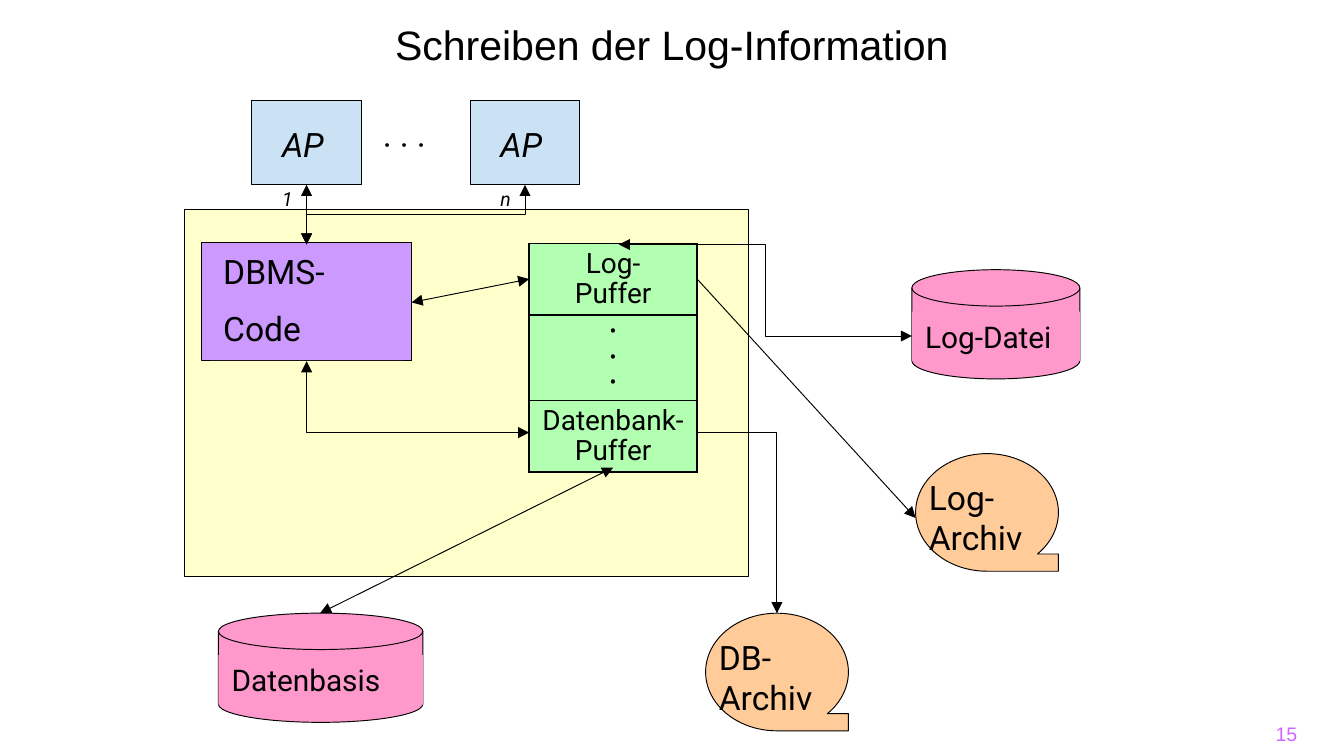
from dataclasses import dataclass

from lxml.etree import SubElement
from pptx import Presentation
from pptx.dml.color import RGBColor
from pptx.enum.shapes import MSO_CONNECTOR, MSO_SHAPE
from pptx.enum.text import MSO_ANCHOR, PP_ALIGN
from pptx.oxml.ns import qn
from pptx.util import Pt


@dataclass(frozen=True)
class Theme:
    ink: str = "000000"
    frame: str = "FFFF99"
    code: str = "CC99FF"
    app: str = "98C6EA"
    table: str = "66FF99"
    disk: str = "FF99CC"
    tape: str = "FFCC99"
    page: str = "CC66FF"
    head: str = "Arial"
    body: str = "Roboto"
    title: float = 22
    large: float = 18
    label: float = 16
    cell: float = 15
    dot: float = 11
    small: float = 10.5
    thin: float = 0.5


class Board:
    def __init__(self, theme, slide):
        self.theme = theme
        self.slide = slide

    def style(self, par, size, face=None, color=None):
        font = par.font
        font.size = Pt(size)
        font.name = face or self.theme.body
        font.color.rgb = RGBColor.from_string(color or self.theme.ink)

    def paint(self, fill, node, color, clear=False):
        fill.solid()
        fill.fore_color.rgb = RGBColor.from_string(color)
        if clear:
            tone = node.find(qn("a:solidFill")).find(qn("a:srgbClr"))
            SubElement(tone, qn("a:alpha")).set("val", "50000")

    def title(self, text, x, y, w, h):
        box = self.slide.shapes.title
        box.left, box.top, box.width, box.height = map(Pt, (x, y, w, h))
        frame = box.text_frame
        frame.text = text
        frame.vertical_anchor = MSO_ANCHOR.BOTTOM
        par = frame.paragraphs[0]
        par.alignment = PP_ALIGN.CENTER
        par.line_spacing = 1.25
        self.style(par, self.theme.title, self.theme.head)

    def shape(self, kind, x, y, w, h, color, clear=False, line=True):
        item = self.slide.shapes.add_shape(kind, Pt(x), Pt(y), Pt(w), Pt(h))
        item.shadow.inherit = False
        self.paint(item.fill, item._element.spPr, color, clear)
        if line:
            item.line.color.rgb = RGBColor.from_string(self.theme.ink)
            item.line.width = Pt(self.theme.thin)
        else:
            item.line.fill.background()
        return item

    def text(self, text, x, y, w, h, size, face=None, color=None):
        box = self.slide.shapes.add_textbox(Pt(x), Pt(y), Pt(w), Pt(h))
        self.label(box, text, size, face, color)
        return box

    def label(self, item, text, size, face=None, color=None):
        frame = item.text_frame
        frame.word_wrap = True
        frame.vertical_anchor = MSO_ANCHOR.TOP
        frame.text = text
        for row, par in enumerate(frame.paragraphs):
            par.alignment = PP_ALIGN.LEFT
            if row:
                par.space_before = Pt(size / 2)
            self.style(par, size, face, color)

    def app(self, x, sub):
        theme = self.theme
        self.shape(MSO_SHAPE.RECTANGLE, x, 54, 58.5, 45, theme.app, True)
        box = self.text("AP", x + 9, 63, 40.5, 51, theme.large)
        par = box.text_frame.paragraphs[0]
        par.font.italic = True
        run = par.add_run()
        run.text = sub
        run.font._element.set("baseline", "-25000")

    def disk(self, text, x, y, w):
        theme = self.theme
        self.shape(MSO_SHAPE.FLOWCHART_MAGNETIC_DISK, x, y, w, 58.5, theme.disk)
        band = self.shape(MSO_SHAPE.RECTANGLE, x, y + 22.5, w, 26.5,
                          theme.disk, line=False)
        self.label(band, text, theme.label)

    def tape(self, text, x, y):
        theme = self.theme
        self.shape(MSO_SHAPE.FLOWCHART_SEQUENTIAL_ACCESS_STORAGE, x, y, 76.5, 63,
                   theme.tape)
        self.text(text, x, y + 9, 76.5, 51, theme.large)

    def table(self, rows, x, y, w):
        total = sum(high for high, size, text in rows)
        grid = self.slide.shapes.add_table(len(rows), 1, Pt(x), Pt(y), Pt(w),
                                           Pt(total)).table
        grid.first_row = grid.horz_banding = False
        for row, (high, size, text) in enumerate(rows):
            grid.rows[row].height = Pt(high)
            cell = grid.cell(row, 0)
            cell.margin_left = cell.margin_right = Pt(5)
            cell.margin_top = cell.margin_bottom = Pt(2.9)
            cell.vertical_anchor = MSO_ANCHOR.MIDDLE
            node = cell._tc.get_or_add_tcPr()
            for side in "LRTB":
                edge = SubElement(node, qn(f"a:ln{side}"), w=str(Pt(1)))
                tone = SubElement(edge, qn("a:solidFill"))
                SubElement(tone, qn("a:srgbClr"), val=self.theme.ink)
            self.paint(cell.fill, node, self.theme.table, True)
            cell.text_frame.text = text
            for place, par in enumerate(cell.text_frame.paragraphs):
                par.alignment = PP_ALIGN.CENTER
                par.line_spacing = 0.9
                if place:
                    par.space_before = Pt(size / 5)
                self.style(par, size)

    def link(self, start, end, kind="line", turn=0, both=True):
        mid = [(a + b) / 2 for a, b in zip(start, end)]
        sign = {0: 0, 90: 1, 270: -1}[turn]
        ends = []
        for x, y in (start, end):
            if sign:
                x, y = mid[0] + sign * (y - mid[1]), mid[1] - sign * (x - mid[0])
            ends += [Pt(x), Pt(y)]
        form = MSO_CONNECTOR.STRAIGHT if kind == "line" else MSO_CONNECTOR.ELBOW
        item = self.slide.shapes.add_connector(form, *ends)
        item.line.color.rgb = RGBColor.from_string(self.theme.ink)
        item.line.width = Pt(self.theme.thin)
        node = item._element.spPr
        node.find(qn("a:prstGeom")).set("prst", kind)
        if turn:
            node.find(qn("a:xfrm")).set("rot", str(turn * 60000))
        edge = node.find(qn("a:ln"))
        for tag in ("a:headEnd", "a:tailEnd") if both else ("a:tailEnd",):
            SubElement(edge, qn(tag), type="triangle")
        SubElement(node, qn("a:effectLst"))


def main():
    deck = Presentation()
    deck.slide_width, deck.slide_height = Pt(720), Pt(405)
    theme = Theme()
    board = Board(theme, deck.slides.add_slide(deck.slide_layouts[5]))

    page = board.text("15", 533.5, 382.5, 161.5, 21.5, theme.small, theme.head,
                      theme.page)
    frame = page.text_frame
    frame.margin_left = frame.margin_right = 0
    frame.vertical_anchor = MSO_ANCHOR.MIDDLE
    frame.paragraphs[0].alignment = PP_ALIGN.RIGHT
    board.title("Schreiben der Log-Information", 90, 0, 540, 40.5)

    board.shape(MSO_SHAPE.RECTANGLE, 99, 112.5, 302, 196.5, theme.frame, True)
    board.shape(MSO_SHAPE.FLOWCHART_PROCESS, 108, 129.75, 112.5, 63.5, theme.code)
    code = board.shape(MSO_SHAPE.RECTANGLE, 112.5, 131, 103.5, 62, theme.code,
                       line=False)
    board.label(code, "DBMS-\nCode", theme.large)
    board.app(135, "1")
    board.app(252, "n")
    board.text("· · ·", 198, 63, 45, 29, theme.large)
    board.table([(38, theme.cell, "Log-\vPuffer"),
                 (45.5, theme.dot, "•\n•\n•"),
                 (38, theme.cell, "Datenbank-\vPuffer")], 283.5, 130.5, 90)
    board.disk("Log-Datei", 488.5, 144.5, 90)
    board.disk("Datenbasis", 117, 328.5, 109.5)
    board.tape("Log-Archiv", 490.5, 243)
    board.tape("DB-Archiv", 378, 328.5)

    board.link((331.5, 131), (488.5, 180), "bentConnector3")
    board.link((373.5, 149.5), (490.5, 277.5), both=False)
    board.link((373.5, 231.75), (416.25, 328.5), "bentConnector2", both=False)
    board.link((171.5, 328.5), (328.5, 250.5))
    board.link((164.25, 193.5), (283.5, 231.75), "bentConnector2", 270)
    board.link((220.5, 162), (283.5, 149.5))
    board.link((164.25, 99), (164.25, 131))
    board.link((281.25, 99), (164.25, 131), "bentConnector3", 90)
    deck.save("out.pptx")


if __name__ == "__main__":
    main()
